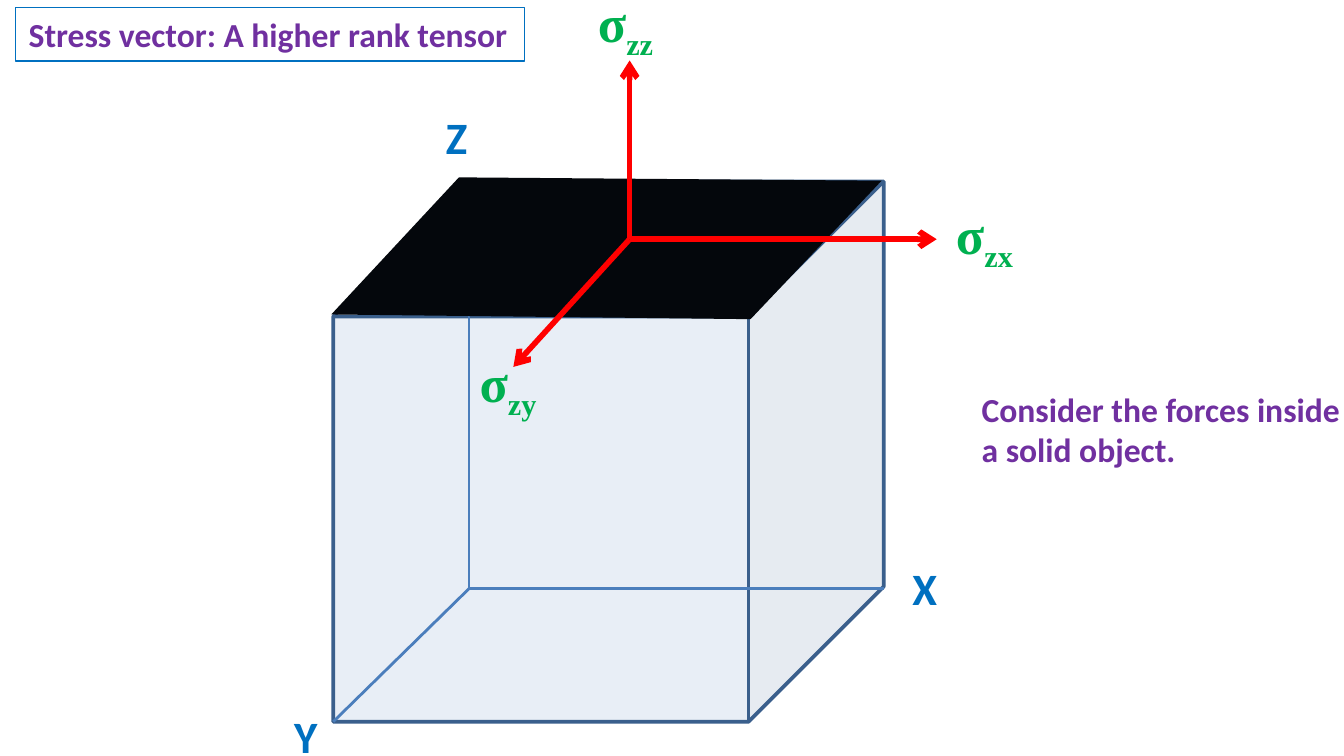
from lxml import etree
from pptx import Presentation
from pptx import util as u
from pptx.dml.color import RGBColor
from pptx.enum import shapes, text
from pptx.oxml.ns import qn

CELL = u.Inches(0.1)  # the slide is a grid of 100 columns by 56.25 rows
COLUMNS, ROWS = 100, 56.25

CUBE_BLUE = RGBColor(0x4F, 0x81, 0xBD)
CUBE_EDGE = RGBColor(0x3A, 0x5F, 0x8C)
HIDDEN_EDGE = RGBColor(0x4B, 0x7E, 0xBC)
FACE_BLACK = RGBColor(0x04, 0x07, 0x0C)
RED = RGBColor(0xFF, 0x00, 0x00)
GREEN = RGBColor(0x00, 0xB0, 0x50)
BLUE = RGBColor(0x00, 0x70, 0xC0)
PURPLE = RGBColor(0x70, 0x30, 0xA0)


def add_line(start, end, color, width, arrow=False):
    line = slide.shapes.add_connector(
        shapes.MSO_CONNECTOR.STRAIGHT,
        *[round(count * CELL) for count in (*start, *end)])
    line.line.color.rgb = color
    line.line.width = u.Pt(width)
    if arrow:
        etree.SubElement(line.line._get_or_add_ln(), qn("a:tailEnd"), type="arrow")
    etree.SubElement(line._element.spPr, qn("a:effectLst"))


def write_label(label, parts, size, font, color, wrap=False):
    """Fill a shape with bold text; a second part is set as a subscript."""
    frame = label.text_frame
    frame.word_wrap = wrap
    frame.auto_size = text.MSO_AUTO_SIZE.SHAPE_TO_FIT_TEXT
    paragraph = frame.paragraphs[0]
    paragraph.alignment = text.PP_ALIGN.LEFT
    for index, part in enumerate(parts):
        run = paragraph.add_run()
        run.text = part
        run.font.size = u.Pt(size)
        run.font.name = font
        run.font.bold = True
        run.font.color.rgb = color
        if index:
            run.font._element.set("baseline", "-25000")


presentation = Presentation()
presentation.slide_width = COLUMNS * CELL
presentation.slide_height = round(ROWS * CELL)
slide = presentation.slides.add_slide(presentation.slide_layouts[6])

# Translucent cube
left, top, width, height, depth = 24.8, 13.5, 40.95, 40.2, 10.05
cube = slide.shapes.add_shape(
    shapes.MSO_SHAPE.CUBE,
    *[round(count * CELL) for count in (left, top, width, height)])
cube.shadow.inherit = False
cube.adjustments[0] = depth / height
cube.fill.solid()
cube.fill.fore_color.rgb = CUBE_BLUE
cube_color = cube._element.spPr.find(qn("a:solidFill"))[0]
etree.SubElement(cube_color, qn("a:alpha"), val="13000")
cube.line.color.rgb = CUBE_EDGE
cube.line.width = u.Pt(2)

# Hidden edges meet at the back corner
back_corner = (34.9, 43.8)
for end in [(34.9, top), (left + width, 43.8), (left, top + height)]:
    add_line(back_corner, end, HIDDEN_EDGE, 1.5)

# Top face, seen in perspective
face_corners = [(round(column * CELL), round(row * CELL)) for column, row in
                [(34.15, 13.2), (65.6, 13.45), (55.85, 23.75), (24.65, 23.4)]]
builder = slide.shapes.build_freeform(*face_corners[0])
builder.add_line_segments(face_corners[1:], close=True)
top_face = builder.convert_to_shape()
top_face.shadow.inherit = False
top_face.fill.solid()
top_face.fill.fore_color.rgb = FACE_BLACK
top_face.line.fill.background()

# Stress components on the top face
face_center = (46.85, 17.8)
for tip, subscript in [((46.85, 4.5), "zz"), ((69.7, 17.8), "zx"), ((38.2, 27.3), "zy")]:
    add_line(face_center, tip, RED, 3, arrow=True)

# Component and axis names
for column, row, box_width, box_height, parts, size, font, color in [
    (43.5, -1.2, 6.5, 5.7, ["σ", "zz"], 28, "Times New Roman", GREEN),
    (70.15, 14.55, 6.6, 5.7, ["σ", "zx"], 28, "Times New Roman", GREEN),
    (34.7, 25.6, 6.6, 5.7, ["σ", "zy"], 28, "Times New Roman", GREEN),
    (32.2, 7.7, 3.6, 5, ["Z"], 24, "Calibri", BLUE),
    (66.9, 41.2, 3.9, 5, ["X"], 24, "Calibri", BLUE),
    (20.9, 52.25, 3.8, 5, ["Y"], 24, "Calibri", BLUE),
    (72.05, 28.45, 29.9, 7.1, ["Consider the forces inside a solid object."],
     18, "Calibri", PURPLE),
]:
    label = slide.shapes.add_textbox(
        *[round(count * CELL) for count in (column, row, box_width, box_height)])
    write_label(label, parts, size, font, color, wrap=size == 18)

title = slide.shapes.add_shape(
    shapes.MSO_SHAPE.RECTANGLE,
    *[round(count * CELL) for count in (1.15, 0.55, 37.9, 4)])
title.shadow.inherit = False
title.fill.background()
title.line.color.rgb = BLUE
title.line.width = u.Pt(0.75)
write_label(title, ["Stress vector: A higher rank tensor"], 18, "Calibri", PURPLE)

presentation.save("out.pptx")
